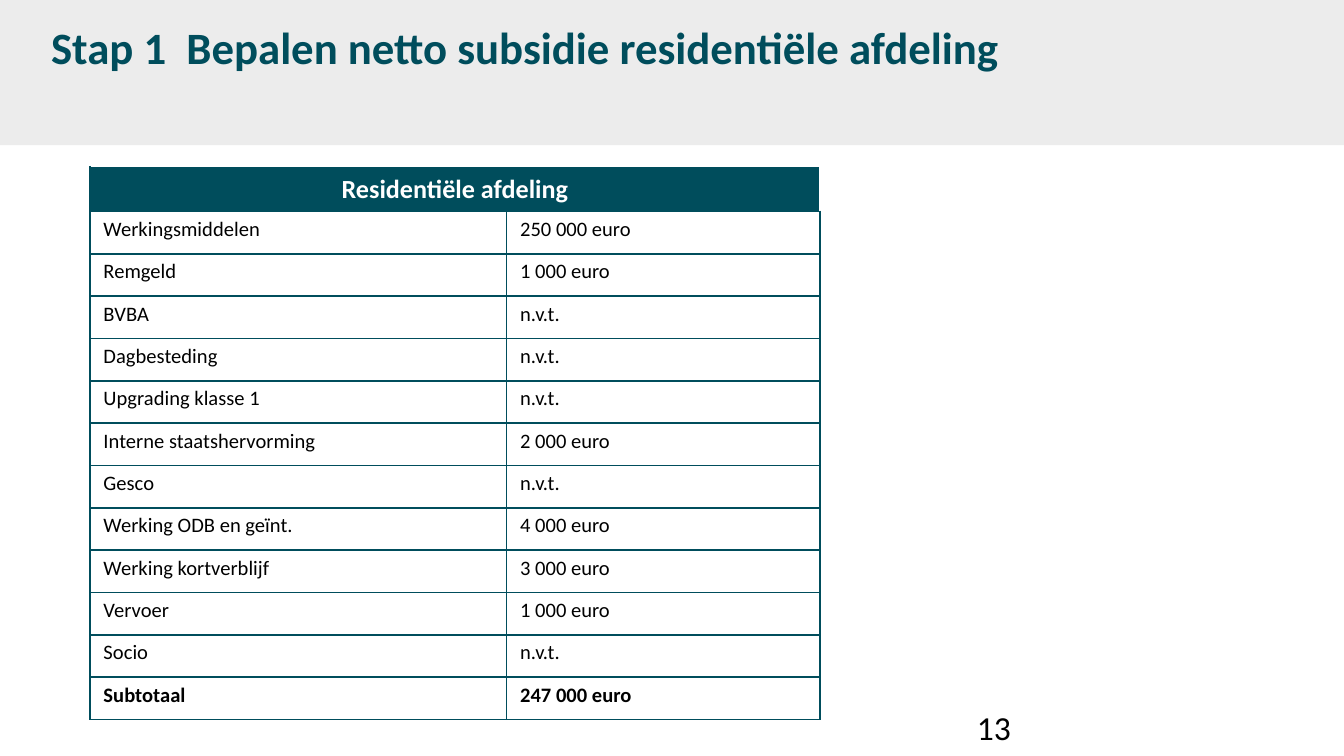
import lxml.etree
import pptx
import pptx.dml.color
import pptx.enum.shapes
import pptx.enum.text
import pptx.oxml.ns
import pptx.util

Inches = pptx.util.Inches
RGBColor = pptx.dml.color.RGBColor
ALIGN = pptx.enum.text.PP_ALIGN
ANCHOR = pptx.enum.text.MSO_ANCHOR

TEAL = RGBColor(0x00, 0x4D, 0x5C)
GREY = RGBColor(0xEC, 0xEC, 0xEC)
WHITE = RGBColor(0xFF, 0xFF, 0xFF)
BLACK = RGBColor(0x00, 0x00, 0x00)
FONT = "Calibri"

HEADER = "Residentiële afdeling"
SUBSIDY_ROWS = [
    ("Werkingsmiddelen", "250 000 euro"),
    ("Remgeld", "1 000 euro"),
    ("BVBA", "n.v.t."),
    ("Dagbesteding", "n.v.t."),
    ("Upgrading klasse 1", "n.v.t."),
    ("Interne staatshervorming", "2 000 euro"),
    ("Gesco", "n.v.t."),
    ("Werking ODB en geïnt.", "4 000 euro"),
    ("Werking kortverblijf", "3 000 euro"),
    ("Vervoer", "1 000 euro"),
    ("Socio", "n.v.t."),
    ("Subtotaal", "247 000 euro"),
]
COLUMN_WIDTHS = (3.1, 2.33)
TABLE_HEIGHT = 4.11
HEADER_HEIGHT = 0.33
ROW_HEIGHT = (TABLE_HEIGHT - HEADER_HEIGHT) / len(SUBSIDY_ROWS)


def write_text(text_frame, text, size=11, color=BLACK, bold=False,
               align=ALIGN.LEFT, anchor=ANCHOR.TOP):
    text_frame.word_wrap = True
    text_frame.vertical_anchor = anchor
    paragraph = text_frame.paragraphs[0]
    paragraph.alignment = align
    run = paragraph.add_run()
    run.text = text
    run.font.name = FONT
    run.font.size = pptx.util.Pt(size)
    run.font.bold = bold
    run.font.color.rgb = color


def set_borders(cell, left=TEAL, right=TEAL, top=TEAL, bottom=TEAL):
    properties = cell._tc.get_or_add_tcPr()
    qn = pptx.oxml.ns.qn
    for side, color in zip("LRTB", (left, right, top, bottom)):
        line = lxml.etree.SubElement(properties, qn(f"a:ln{side}"),
                                     w=str(pptx.util.Pt(1)))
        fill = lxml.etree.SubElement(line, qn("a:solidFill"))
        lxml.etree.SubElement(fill, qn("a:srgbClr"), val=str(color))


def fill_cell(cell, color):
    cell.fill.solid()
    cell.fill.fore_color.rgb = color


def add_title(slide, text):
    title = slide.shapes.title
    title.left, title.top = Inches(0.28), Inches(0)
    title.width, title.height = Inches(8.11), Inches(0.69)
    write_text(title.text_frame, text, size=24, color=TEAL, bold=True,
               anchor=ANCHOR.MIDDLE)
    title.text_frame.auto_size = pptx.enum.text.MSO_AUTO_SIZE.NONE


def add_title_band(slide):
    band = slide.shapes.add_shape(
        pptx.enum.shapes.MSO_SHAPE.RECTANGLE,
        Inches(0), Inches(-0.02), Inches(10), Inches(1.1))
    band.shadow.inherit = False
    band.fill.solid()
    band.fill.fore_color.rgb = GREY
    band.line.fill.background()
    # Place the band behind the title
    slide.shapes.title.element.addprevious(band.element)


def add_subsidy_table(slide):
    table = slide.shapes.add_table(
        len(SUBSIDY_ROWS) + 1, len(COLUMN_WIDTHS), Inches(0.67), Inches(1.24),
        Inches(sum(COLUMN_WIDTHS)), Inches(TABLE_HEIGHT)).table
    for column, width in zip(table.columns, COLUMN_WIDTHS):
        column.width = Inches(width)
    for row in table.rows:
        row.height = Inches(ROW_HEIGHT)
    table.rows[0].height = Inches(HEADER_HEIGHT)

    # Header across both columns
    header = table.cell(0, 0)
    header.merge(table.cell(0, 1))
    for cell in table.rows[0].cells:
        set_borders(cell, right=WHITE, top=WHITE)
        fill_cell(cell, TEAL)
    write_text(header.text_frame, HEADER, size=14, color=WHITE, bold=True,
               align=ALIGN.CENTER)

    # Amounts, with the subtotal in bold
    for row_number, values in enumerate(SUBSIDY_ROWS, start=1):
        for column_number, value in enumerate(values):
            cell = table.cell(row_number, column_number)
            cell.margin_left = cell.margin_right = Inches(0.1)
            cell.margin_top = cell.margin_bottom = Inches(0.04)
            set_borders(cell)
            fill_cell(cell, WHITE)
            write_text(cell.text_frame, value,
                       bold=row_number == len(SUBSIDY_ROWS))


def add_page_number(slide, number):
    box = slide.shapes.add_textbox(
        Inches(7.17), Inches(5.21), Inches(2.33), Inches(0.3))
    write_text(box.text_frame, number, size=18)


def main():
    presentation = pptx.Presentation()
    # Widescreen, 16 by 9
    presentation.slide_width = Inches(10)
    presentation.slide_height = Inches(10 * 9 / 16)
    slide = presentation.slides.add_slide(presentation.slide_layouts[5])
    add_title_band(slide)
    add_title(slide, "Stap 1  Bepalen netto subsidie residentiële afdeling")
    add_page_number(slide, "13")
    add_subsidy_table(slide)
    presentation.save("out.pptx")


if __name__ == "__main__":
    main()
